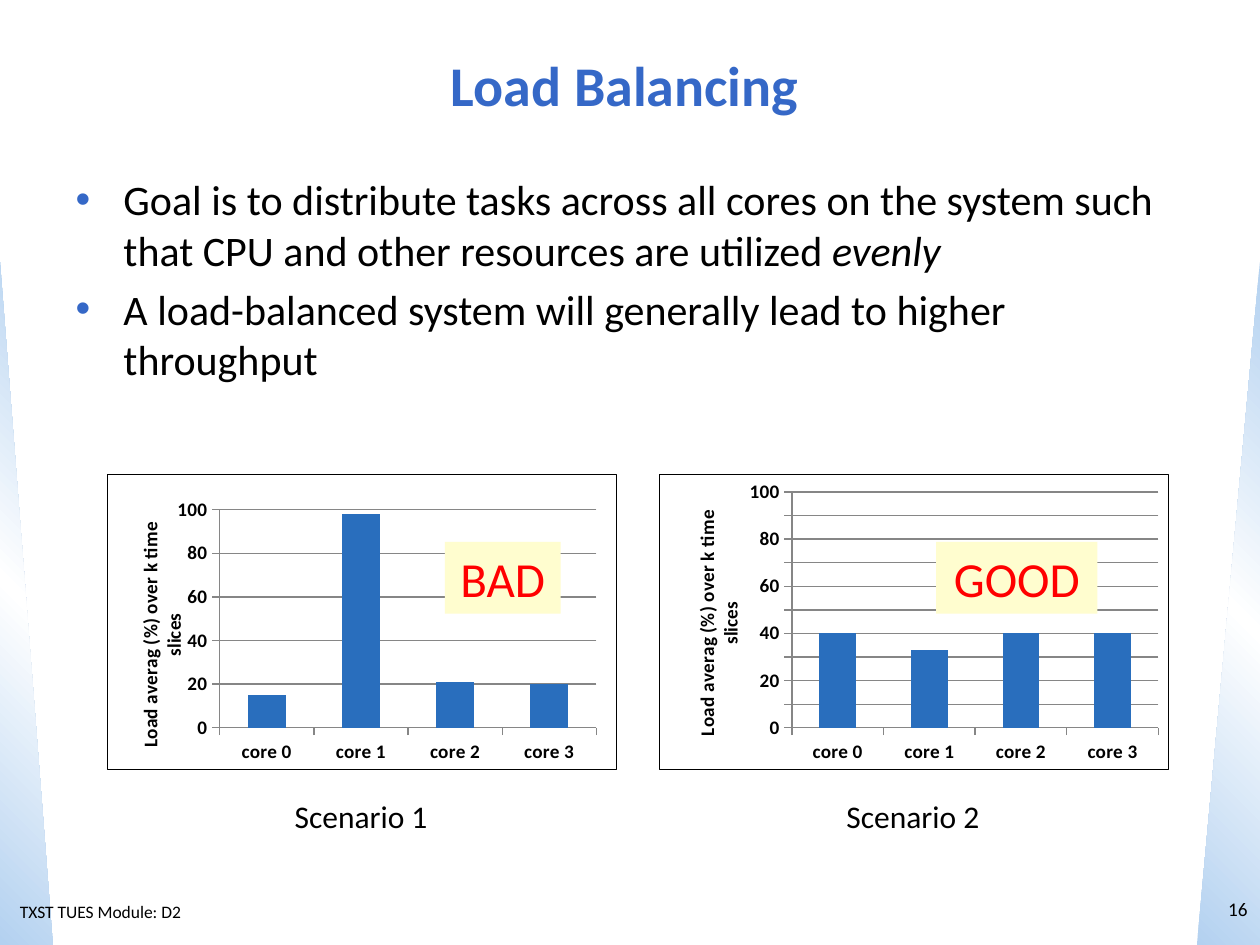
import copy
from dataclasses import dataclass

from lxml import etree
from pptx import Presentation
from pptx import util as u
from pptx.chart import data as chart_data
from pptx.dml.color import RGBColor
from pptx.enum import chart as charts, shapes, text
from pptx.oxml import parse_xml
from pptx.oxml.ns import nsdecls, qn


@dataclass(frozen=True)
class Theme:
    font: str = "Calibri"
    accent: str = "3568C7"
    ink: str = "000000"
    bar: str = "296EBD"
    grid: str = "868686"
    verdict: str = "FF0000"
    verdict_fill: str = "FFFDCF"
    wedge: tuple = ("B3D1F0", "FFFFFF", "B3D1F0")
    title_size: int = 32
    body_size: int = 24
    verdict_size: int = 28
    caption_size: int = 18
    small_size: int = 11
    footer_size: int = 10


theme = Theme()


def write(paragraph, words, size, color=theme.ink, bold=False, italic=False, align=None):
    """Append a formatted run to the paragraph."""
    run = paragraph.add_run()
    run.text = words
    run.font.name = theme.font
    run.font.size = u.Pt(size)
    run.font.bold = bold
    run.font.italic = italic
    run.font.color.rgb = RGBColor.from_string(color)
    if align is not None:
        paragraph.alignment = align


def manual_layout(**values):
    """Return a c:layout element with fractions of the chart area."""
    layout = etree.Element(qn("c:layout"))
    manual = etree.SubElement(layout, qn("c:manualLayout"))
    if "w" in values:
        etree.SubElement(manual, qn("c:layoutTarget"), val="inner")
    for mode in ("xMode", "yMode"):
        etree.SubElement(manual, qn(f"c:{mode}"), val="edge")
    for name, value in values.items():
        etree.SubElement(manual, qn(f"c:{name}"), val=str(value))
    return layout


prs = Presentation()
prs.slide_width, prs.slide_height = u.Inches(10), u.Inches(7.5)
slide = prs.slides.add_slide(prs.slide_layouts[1])
title, body = slide.shapes.title, slide.placeholders[1]

# Side wedges, placed behind everything else
for position, (left, width, angle, flipped) in enumerate(
        [(0, 0.42, 45, False), (9.5, 0.5, 315, True)]):
    wedge = slide.shapes.add_shape(shapes.MSO_SHAPE.RIGHT_TRIANGLE, u.Inches(left),
                                   u.Inches(2.08), u.Inches(width), u.Inches(5.42))
    wedge.shadow.inherit = False
    wedge.line.fill.background()
    wedge.fill.gradient()
    wedge.fill.gradient_angle = angle
    stop_list = wedge._element.spPr.find(".//" + qn("a:gsLst"))
    stop_list.insert(1, copy.deepcopy(stop_list[0]))
    for stop, place, color in zip(wedge.fill.gradient_stops, (0, 0.5, 1), theme.wedge):
        stop.position = place
        stop.color.rgb = RGBColor.from_string(color)
    if flipped:
        wedge._element.spPr.find(qn("a:xfrm")).set("flipH", "1")
    slide.shapes._spTree.insert(2 + position, wedge._element)

# Title and bullets
title.left, title.top = u.Inches(0.25), u.Inches(0.25)
title.width, title.height = u.Inches(9.42), u.Inches(0.83)
title.text_frame.vertical_anchor = text.MSO_ANCHOR.MIDDLE
write(title.text_frame.paragraphs[0], "Load Balancing", theme.title_size,
      color=theme.accent, bold=True, align=text.PP_ALIGN.CENTER)

body.left, body.top = u.Inches(0.5), u.Inches(1.33)
body.width, body.height = u.Inches(9), u.Inches(1.92)
body.text_frame.auto_size = text.MSO_AUTO_SIZE.NONE
bullets = [
    [("Goal is to distribute tasks across all cores on the system such "
      "that CPU and other resources are utilized ", False), ("evenly", True)],
    [("A load-balanced system will generally lead to higher throughput", False)],
]
for number, pieces in enumerate(bullets):
    bullet = body.text_frame.add_paragraph() if number else body.text_frame.paragraphs[0]
    properties = bullet._p.get_or_add_pPr()
    properties.set("marL", str(u.Inches(0.38)))
    properties.set("indent", str(-u.Inches(0.38)))
    bullet_color = etree.SubElement(properties, qn("a:buClr"))
    etree.SubElement(bullet_color, qn("a:srgbClr"), val=theme.accent)
    etree.SubElement(properties, qn("a:buFont"), typeface="Arial")
    etree.SubElement(properties, qn("a:buChar"), char="•")
    bullet.space_before = u.Pt(4.8 if number else 0)
    for words, italic in pieces:
        write(bullet, words, theme.body_size, italic=italic)

# Scenarios: chart, verdict on top of it, caption below it
scenarios = [
    (0.85, "Scenario 1", [15, 98, 21, 20], 20, "BAD", 3.53, 0.92,
     dict(x=0.22, y=0.12, w=0.74, h=0.74), dict(x=0.05, y=0.15)),
    (5.23, "Scenario 2", [40, 33, 40, 40], 10, "GOOD", 7.43, 1.28,
     dict(x=0.26, y=0.06, w=0.72, h=0.8), dict(x=0.06, y=0.11)),
]
for (left, caption, loads, step, verdict, verdict_left, verdict_width,
     plot_place, title_place) in scenarios:
    load_data = chart_data.CategoryChartData()
    load_data.categories = [f"core {core}" for core in range(4)]
    load_data.add_series("Series 1", loads)
    chart = slide.shapes.add_chart(
        charts.XL_CHART_TYPE.COLUMN_CLUSTERED, u.Inches(left), u.Inches(3.76),
        u.Inches(4.05), u.Inches(2.35), load_data).chart
    chart.has_legend = chart.has_title = False
    chart.font.name = theme.font
    chart.font.size = u.Pt(theme.small_size)
    chart.font.color.rgb = RGBColor.from_string(theme.ink)
    plot = chart.plots[0]
    plot.gap_width = 150
    plot.vary_by_categories = False
    bars = plot.series[0].format.fill
    bars.solid()
    bars.fore_color.rgb = RGBColor.from_string(theme.bar)

    load_axis = chart.value_axis
    load_axis.minimum_scale, load_axis.maximum_scale = 0, 100
    load_axis.major_unit = step
    load_axis.has_major_gridlines = True
    for axis in (chart.category_axis, load_axis):
        axis.major_tick_mark = charts.XL_TICK_MARK.OUTSIDE
        axis.tick_labels.font.bold = True
        axis.tick_labels.font.size = u.Pt(theme.small_size)
    for line in (load_axis.major_gridlines.format.line, load_axis.format.line,
                 chart.category_axis.format.line):
        line.color.rgb = RGBColor.from_string(theme.grid)
        line.width = u.Pt(0.75)
    write(load_axis.axis_title.text_frame.paragraphs[0],
          "Load averag (%) over k time slices", theme.small_size, bold=True)

    chart_xml = chart._chartSpace.find(qn("c:chart"))
    plot_area = chart_xml.find(qn("c:plotArea"))
    axis_title = plot_area.find(".//" + qn("c:title"))
    for part in (plot_area, axis_title):
        for old in part.findall(qn("c:layout")):
            part.remove(old)
    plot_area.insert(0, manual_layout(**plot_place))
    axis_title.find(qn("c:tx")).addnext(manual_layout(**title_place))
    chart_xml.addnext(parse_xml(
        f'<c:spPr {nsdecls("c", "a")}><a:ln w="{u.Pt(0.75)}"><a:solidFill>'
        f'<a:srgbClr val="{theme.ink}"/></a:solidFill></a:ln></c:spPr>'))

    label = slide.shapes.add_shape(shapes.MSO_SHAPE.RECTANGLE, u.Inches(verdict_left),
                                   u.Inches(4.3), u.Inches(verdict_width), u.Inches(0.57))
    label.shadow.inherit = False
    label.fill.solid()
    label.fill.fore_color.rgb = RGBColor.from_string(theme.verdict_fill)
    label.line.fill.background()
    write(label.text_frame.paragraphs[0], verdict, theme.verdict_size,
          color=theme.verdict, align=text.PP_ALIGN.CENTER)

    note = slide.shapes.add_textbox(u.Inches(left + 1.39), u.Inches(6.28),
                                    u.Inches(1.27), u.Inches(0.4))
    write(note.text_frame.paragraphs[0], caption, theme.caption_size)

# Footer
module = slide.shapes.add_textbox(u.Inches(0.06), u.Inches(7.1), u.Inches(1.75), u.Inches(0.27))
module.text_frame.word_wrap = True
write(module.text_frame.paragraphs[0], "TXST TUES Module: D2", theme.footer_size)
page = slide.shapes.add_textbox(u.Inches(9.5), u.Inches(6.92), u.Inches(0.5), u.Inches(0.58))
page.text_frame.word_wrap = True
page.text_frame.vertical_anchor = text.MSO_ANCHOR.MIDDLE
write(page.text_frame.paragraphs[0], "16", theme.small_size, align=text.PP_ALIGN.RIGHT)

prs.save("out.pptx")
